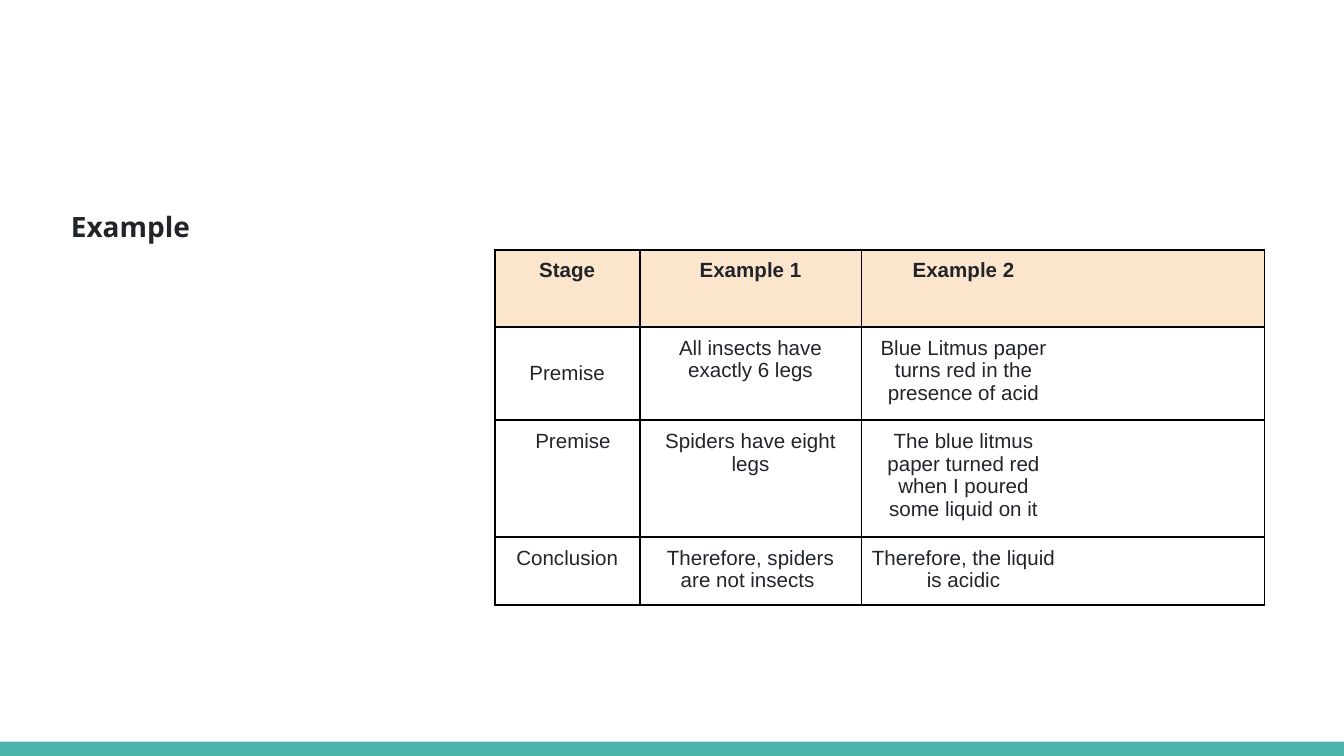
"""Build a slide with a table of deductive reasoning examples."""
from dataclasses import dataclass

from lxml.etree import SubElement
from pptx import Presentation
from pptx.dml.color import RGBColor
from pptx.enum.shapes import MSO_SHAPE as Shape
from pptx.enum.text import MSO_ANCHOR as Anchor, PP_ALIGN as Align
from pptx.oxml.ns import qn
from pptx.slide import Slide
from pptx.table import _Cell as Cell
from pptx.text.text import TextFrame
from pptx.util import Cm, Pt


@dataclass(frozen=True)
class Theme:
    ink: RGBColor = RGBColor.from_string("212529")
    accent: RGBColor = RGBColor.from_string("4DB6AC")
    header: RGBColor = RGBColor.from_string("FCE5CD")
    border: str = "000000"
    title_font: str = "Open Sans"
    body_font: str = "Arial"
    title_size: Pt = Pt(15)
    body_size: Pt = Pt(11)
    border_width: Pt = Pt(1)
    inset: Cm = Cm(0.18)


@dataclass(frozen=True)
class Column:
    width: Cm
    right_inset: Cm = Cm(0.18)


@dataclass(frozen=True)
class Row:
    height: Cm
    texts: tuple[str, str, str]
    stage_anchor: Anchor = Anchor.TOP
    stage_indent: Cm = Cm(0)
    is_header: bool = False


THEME = Theme()
COLUMNS = (Column(Cm(2.74)), Column(Cm(4.19)), Column(Cm(7.62), right_inset=Cm(3.94)))
ROWS = (
    Row(Cm(1.46), ("Stage", "Example 1", "Example 2"), is_header=True),
    Row(
        Cm(1.76),
        ("Premise", "All insects have exactly 6 legs",
         "Blue Litmus paper turns red in the presence of acid"),
        stage_anchor=Anchor.MIDDLE,
    ),
    Row(
        Cm(2.21),
        ("Premise", "Spiders have eight legs",
         "The blue litmus paper turned red when I poured some liquid on it"),
        stage_indent=Cm(0.22),
    ),
    Row(
        Cm(1.29),
        ("Conclusion", "Therefore, spiders are not insects ",
         "Therefore, the liquid is acidic"),
    ),
)


def write_text(text_frame: TextFrame, text: str, font: str, size: Pt,
               bold: bool, align: Align) -> None:
    text_frame.text = text
    text_frame.word_wrap = True
    paragraph = text_frame.paragraphs[0]
    paragraph.alignment = align
    for run in paragraph.runs:
        run.font.name = font
        run.font.size = size
        run.font.bold = bold
        run.font.color.rgb = THEME.ink


def add_borders(cell: Cell) -> None:
    properties = cell._tc.get_or_add_tcPr()
    for side in ("a:lnL", "a:lnR", "a:lnT", "a:lnB"):
        line = SubElement(properties, qn(side), w=str(int(THEME.border_width)))
        fill = SubElement(line, qn("a:solidFill"))
        SubElement(fill, qn("a:srgbClr"), val=THEME.border)


def fill_cell(cell: Cell, row: Row, column: Column, text: str, is_stage: bool) -> None:
    write_text(cell.text_frame, text, THEME.body_font, THEME.body_size,
               row.is_header, Align.CENTER)
    cell.margin_top = cell.margin_bottom = THEME.inset
    cell.margin_left = THEME.inset + (row.stage_indent if is_stage else 0)
    cell.margin_right = column.right_inset
    cell.vertical_anchor = row.stage_anchor if is_stage else Anchor.TOP
    add_borders(cell)
    if row.is_header:
        cell.fill.solid()
        cell.fill.fore_color.rgb = THEME.header
    else:
        cell.fill.background()


def add_example_table(slide: Slide) -> None:
    width = sum(column.width for column in COLUMNS)
    height = sum(row.height for row in ROWS)
    table = slide.shapes.add_table(
        len(ROWS), len(COLUMNS), Cm(9.35), Cm(4.72), width, height).table
    table.horz_banding = False
    for table_column, column in zip(table.columns, COLUMNS):
        table_column.width = column.width
    for row_index, row in enumerate(ROWS):
        table.rows[row_index].height = row.height
        for column_index, (column, text) in enumerate(zip(COLUMNS, row.texts)):
            fill_cell(table.cell(row_index, column_index), row, column, text,
                      is_stage=column_index == 0)


def add_footer_bar(slide: Slide, slide_width: int, slide_height: int) -> None:
    height = Cm(0.27)
    shape = slide.shapes.add_shape(
        Shape.RECTANGLE, 0, slide_height - height, slide_width, height)
    shape.shadow.inherit = False
    shape.fill.solid()
    shape.fill.fore_color.rgb = THEME.accent
    shape.line.fill.background()


def format_title(slide: Slide) -> None:
    title = slide.shapes.title
    title.left, title.top, title.width, title.height = Cm(1.09), Cm(3.71), Cm(12.47), Cm(1.14)
    text_frame = title.text_frame
    write_text(text_frame, "Example", THEME.title_font, THEME.title_size, True, Align.LEFT)
    text_frame.vertical_anchor = Anchor.TOP
    text_frame.margin_left = text_frame.margin_right = Cm(0.25)
    text_frame.margin_top = text_frame.margin_bottom = Cm(0.25)
    text_frame.paragraphs[0].space_before = Pt(0)
    text_frame.paragraphs[0].space_after = Pt(12)


def main() -> None:
    presentation = Presentation()
    presentation.slide_width, presentation.slide_height = Cm(25.4), Cm(14.29)
    slide = presentation.slides.add_slide(presentation.slide_layouts[5])
    add_footer_bar(slide, presentation.slide_width, presentation.slide_height)
    format_title(slide)
    add_example_table(slide)
    presentation.save("out.pptx")


if __name__ == "__main__":
    main()
